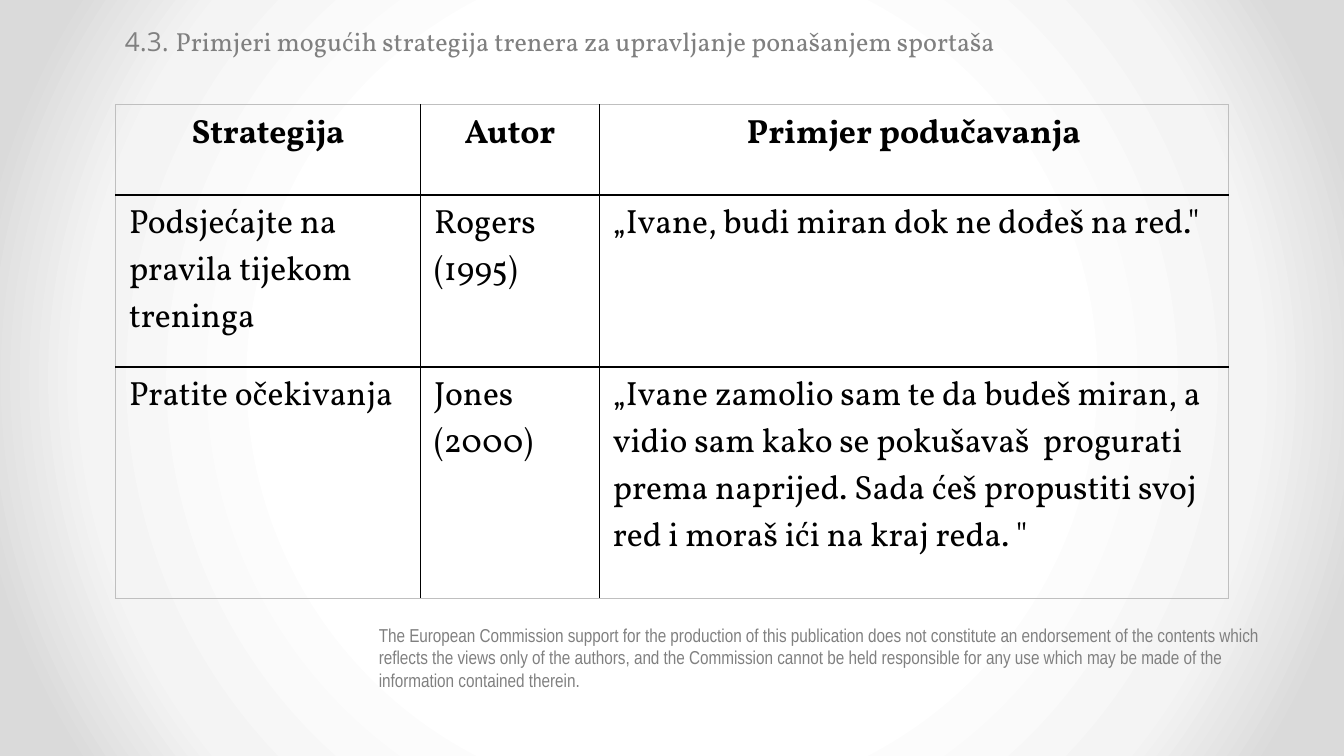
from dataclasses import dataclass

import pptx
import pptx.dml.color
import pptx.enum.text
import pptx.oxml
import pptx.oxml.ns
import pptx.util
from pptx.util import Inches

ALIGN = pptx.enum.text.PP_ALIGN
ANCHOR = pptx.enum.text.MSO_ANCHOR


@dataclass(frozen=True)
class Theme:
    serif: str = "Vollkorn"
    sans: str = "Open Sans"
    narrow: str = "Arial Narrow"
    ink: str = "000000"
    muted: str = "808080"
    frame: str = "BFBFBF"
    title_size: int = 14
    table_size: int = 18
    note_size: int = 10
    grid_width: float = 1
    frame_width: float = 0.5
    backdrop: tuple = ((50, "FFFFFF"), (76, "F4F4F4"), (92, "DADADA"))


class SlideBuilder:
    """Holds the theme and the slide being filled."""

    def __init__(self, slide, theme):
        self.slide = slide
        self.theme = theme

    def set_format(self, target, values):
        for name, value in values.items():
            setattr(target, name, value)

    def add_span(self, para, text, font, size, color, bold=False):
        span = para.add_run()
        span.text = text
        self.set_format(span.font, {"name": font, "size": pptx.util.Pt(size), "bold": bold})
        span.font.color.rgb = pptx.dml.color.RGBColor.from_string(color)

    def add_backdrop(self):
        """Fill the background with a radial gradient from the slide centre."""
        stops = "".join(
            f'<a:gs pos="{position * 1000}"><a:srgbClr val="{color}"/></a:gs>'
            for position, color in self.theme.backdrop
        )
        gradient = pptx.oxml.parse_xml(
            f'<a:gradFill {pptx.oxml.ns.nsdecls("a")} rotWithShape="1"><a:gsLst>{stops}</a:gsLst>'
            '<a:path path="circle"><a:fillToRect l="50000" t="50000" r="50000" b="50000"/></a:path>'
            "</a:gradFill>"
        )
        fill = self.slide.background.fill
        fill.solid()
        properties = self.slide.element.find(".//" + pptx.oxml.ns.qn("p:bgPr"))
        properties.replace(properties[0], gradient)

    def add_title(self, number, text, left, top, width, height):
        title = self.slide.shapes.title
        self.set_format(title, {"left": left, "top": top, "width": width, "height": height})
        frame = title.text_frame
        self.set_format(frame, {
            "word_wrap": True,
            "vertical_anchor": ANCHOR.TOP,
            "auto_size": pptx.enum.text.MSO_AUTO_SIZE.NONE,
        })
        para = frame.paragraphs[0]
        para.alignment = ALIGN.LEFT
        properties = para._p.get_or_add_pPr()
        properties.set("marL", str(Inches(0.5)))
        properties.set("indent", str(Inches(-0.5)))
        theme = self.theme
        self.add_span(para, number, theme.sans, theme.title_size, theme.muted)
        self.add_span(para, text, theme.serif, theme.title_size, theme.muted)

    def add_note(self, text, left, top, width, height):
        box = self.slide.shapes.add_textbox(left, top, width, height)
        box.text_frame.word_wrap = True
        theme = self.theme
        self.add_span(box.text_frame.paragraphs[0], text, theme.narrow, theme.note_size, theme.muted)

    def add_border(self, cell, side, is_frame):
        theme = self.theme
        color = theme.frame if is_frame else theme.ink
        width = pptx.util.Pt(theme.frame_width if is_frame else theme.grid_width)
        line = pptx.oxml.parse_xml(
            f'<a:{side} {pptx.oxml.ns.nsdecls("a")} w="{width}"><a:solidFill>'
            f'<a:srgbClr val="{color}"/></a:solidFill></a:{side}>'
        )
        cell._tc.get_or_add_tcPr().append(line)

    def add_table(self, rows, column_widths, row_heights, left, top):
        """Draw an unfilled grid with a bold centred header and a light outer frame."""
        theme = self.theme
        last_row, last_column = len(rows) - 1, len(column_widths) - 1
        table = self.slide.shapes.add_table(
            len(rows), len(column_widths), left, top,
            Inches(sum(column_widths)), Inches(sum(row_heights)),
        ).table
        self.set_format(table, {"first_row": False, "horz_banding": False})
        for column, width in zip(table.columns, column_widths):
            column.width = Inches(width)
        for row, height in zip(table.rows, row_heights):
            row.height = Inches(height)
        for r, texts in enumerate(rows):
            for c, text in enumerate(texts):
                cell = table.cell(r, c)
                sides = {"lnL": c == 0, "lnR": c == last_column, "lnT": r == 0, "lnB": r == last_row}
                for side, is_frame in sides.items():
                    self.add_border(cell, side, is_frame)
                cell.fill.background()
                para = cell.text_frame.paragraphs[0]
                para.alignment = ALIGN.CENTER if r == 0 else ALIGN.LEFT
                self.add_span(para, text, theme.serif, theme.table_size, theme.ink, bold=r == 0)


STRATEGIES = [
    ("Strategija", "Autor", "Primjer podučavanja"),
    ("Podsjećajte na pravila tijekom treninga", "Rogers (1995)",
     "„Ivane, budi miran dok ne dođeš na red.\""),
    ("Pratite očekivanja", "Jones (2000)",
     "„Ivane zamolio sam te da budeš miran, a vidio sam kako se pokušavaš  progurati "
     "prema naprijed. Sada ćeš propustiti svoj red i moraš ići na kraj reda. \""),
]
DISCLAIMER = (
    "The European Commission support for the production of this publication does not constitute "
    "an endorsement of the contents which reflects the views only of the authors, and the "
    "Commission cannot be held responsible for any use which may be made of the information "
    "contained therein."
)


def main():
    deck = pptx.Presentation()
    deck.slide_width = Inches(10)
    deck.slide_height = deck.slide_width * 9 // 16
    title_only = deck.slide_layouts[5]
    builder = SlideBuilder(deck.slides.add_slide(title_only), Theme())
    builder.add_backdrop()
    builder.add_note(DISCLAIMER, Inches(2.72), Inches(4.59), Inches(6.93), Inches(0.67))
    builder.add_table(STRATEGIES, (2.27, 1.33, 4.68), (0.67, 1.28, 1.72), Inches(0.86), Inches(0.78))
    builder.add_title(
        "4.3. ", "Primjeri mogućih strategija trenera za upravljanje ponašanjem sportaša",
        Inches(0.83), Inches(0.14), Inches(8.13), Inches(0.34),
    )
    deck.save("out.pptx")


if __name__ == "__main__":
    main()
